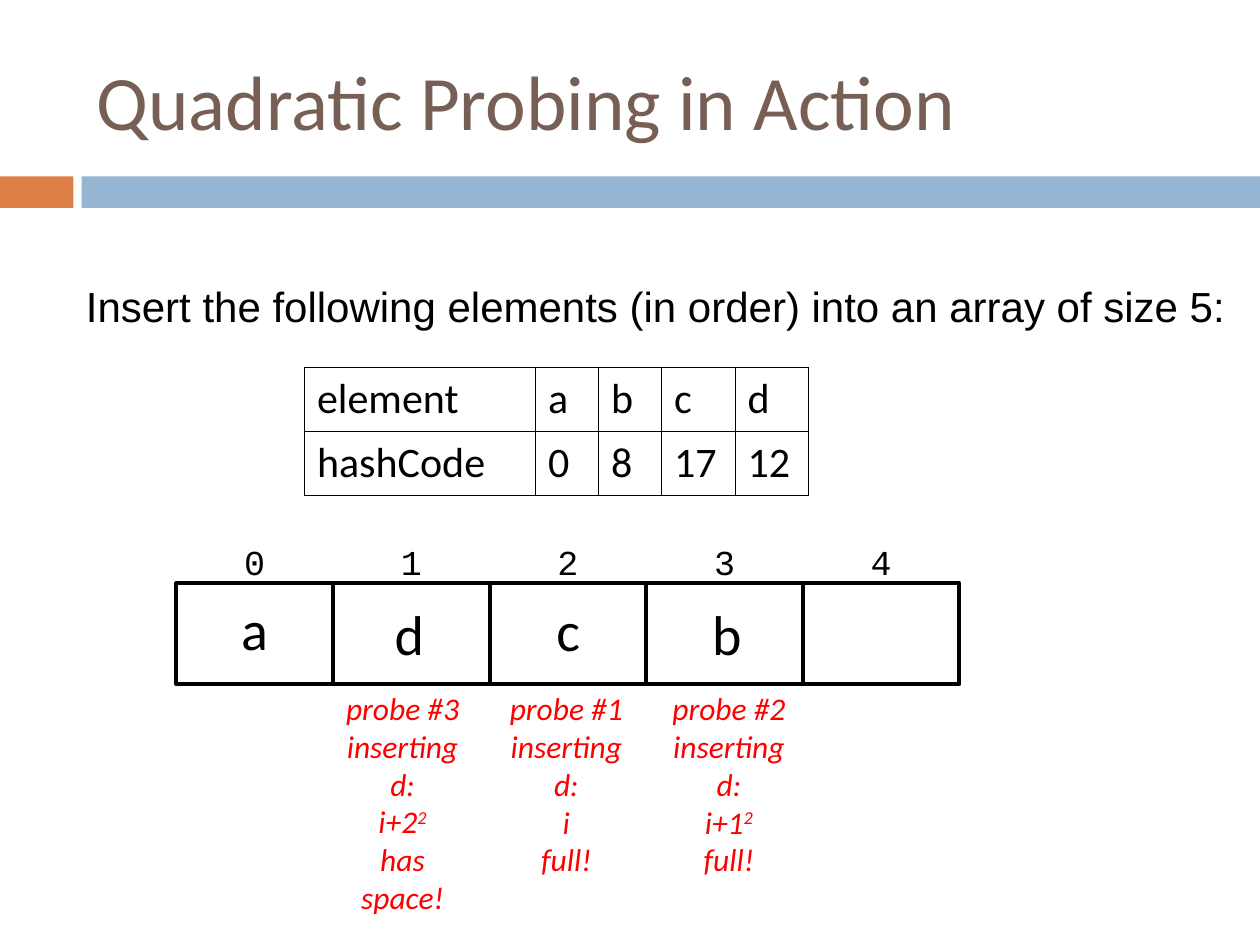
from lxml import etree
from pptx import Presentation
from pptx.dml.color import RGBColor
from pptx.enum.shapes import MSO_SHAPE
from pptx.enum.text import MSO_ANCHOR, MSO_AUTO_SIZE, PP_ALIGN
from pptx.oxml.ns import qn
from pptx.util import Pt

RECT = MSO_SHAPE.RECTANGLE
MIDDLE = MSO_ANCHOR.MIDDLE
LEFT, CENTER = PP_ALIGN.LEFT, PP_ALIGN.CENTER
GROW, FIXED = MSO_AUTO_SIZE.SHAPE_TO_FIT_TEXT, MSO_AUTO_SIZE.NONE

ORANGE = RGBColor(0xDD, 0x80, 0x47)
BLUE = RGBColor(0x94, 0xB6, 0xD2)
BROWN = RGBColor(0x77, 0x5F, 0x55)
BLACK = RGBColor(0, 0, 0)
RED = RGBColor(0xFF, 0, 0)

# Array geometry
START, SLOT, TOP, TALL = 100.8, 89.5, 333.3, 57.6


def style(para, size, font="Calibri", color=BLACK, align=LEFT):
    para.alignment = align
    for run in para.runs:
        run.font.size = Pt(size)
        run.font.name = font
        run.font.color.rgb = color


def add_box(shapes, left, top, width, height, fill=None, line=None):
    box = shapes.add_shape(RECT, Pt(left), Pt(top), Pt(width), Pt(height))
    box.shadow.inherit = False
    if fill:
        box.fill.solid()
        box.fill.fore_color.rgb = fill
    else:
        box.fill.background()
    if line:
        box.line.color.rgb = line
        box.line.width = Pt(2.25)
    else:
        box.line.fill.background()


def add_text(shapes, left, top, width, height, text, size, wrap=True, **look):
    box = shapes.add_textbox(Pt(left), Pt(top), Pt(width), Pt(height))
    frame = box.text_frame
    frame.text = text
    frame.word_wrap = wrap
    frame.auto_size = GROW
    for para in frame.paragraphs:
        style(para, size, **look)
    return frame


def add_title(slide, text):
    title = slide.shapes.title
    title.left, title.top = Pt(48), Pt(18)
    title.width, title.height = Pt(642), Pt(78)
    frame = title.text_frame
    frame.text = text
    frame.vertical_anchor = MIDDLE
    style(frame.paragraphs[0], 44, color=BROWN)


def add_border(cell):
    props = cell._tc.get_or_add_tcPr()
    for spot, side in enumerate(("lnL", "lnR", "lnT", "lnB")):
        line = etree.Element(qn("a:" + side), w="5080")
        fill = etree.SubElement(line, qn("a:solidFill"))
        etree.SubElement(fill, qn("a:srgbClr"), val=str(BLACK))
        props.insert(spot, line)


def add_grid(shapes, left, top, widths, height, rows):
    frame = shapes.add_table(len(rows), len(widths), Pt(left), Pt(top),
                             Pt(sum(widths)), Pt(height * len(rows)))
    table = frame.table
    table.first_row = table.horz_banding = False
    for col, width in zip(table.columns, widths):
        col.width = Pt(width)
    for r, row in enumerate(rows):
        for c, text in enumerate(row):
            cell = table.cell(r, c)
            cell.text = text
            cell.fill.background()
            cell.vertical_anchor = MIDDLE
            style(cell.text_frame.paragraphs[0], 24)
            add_border(cell)


def add_slots(shapes, count):
    group = shapes.add_group_shape().shapes
    for i in range(count):
        add_box(group, START + i * SLOT, TOP, SLOT, TALL, line=BLACK)
    for i in range(count):
        frame = add_text(group, START + i * SLOT, 312, SLOT, 18, str(i), 20,
                         font="Courier New", align=CENTER)
        frame.auto_size = FIXED
        frame.vertical_anchor = MIDDLE
        frame.margin_left = frame.margin_right = Pt(7.2)
        frame.margin_top = frame.margin_bottom = Pt(7.2)


def add_probe(shapes, left, number, step, power, *result):
    lines = [f"probe #{number}", "inserting d:", step, *result]
    frame = add_text(shapes, left, 390.24, 91.5, 22 * len(lines) + 7,
                     "\n".join(lines), 18, color=RED, align=CENTER)
    if power:
        para = frame.paragraphs[2]
        para.add_run().text = power
        style(para, 18, color=RED, align=CENTER)
        para.runs[-1]._r.get_or_add_rPr().set("baseline", "30000")
    for para in frame.paragraphs:
        for run in para.runs:
            run.font.italic = True


def main():
    deck = Presentation()
    deck.slide_width, deck.slide_height = Pt(720), Pt(540)
    slide = deck.slides.add_slide(deck.slide_layouts[5])
    shapes = slide.shapes

    # Title and bands
    add_box(shapes, 0, 100.8, 42, 18, fill=ORANGE)
    add_box(shapes, 46.6, 100.8, 673.4, 18, fill=BLUE)
    add_title(slide, "Quadratic Probing in Action")

    # Task and hash codes
    add_grid(shapes, 174, 210, [132, 36, 36, 42, 42], 36.5,
             [["element", "a", "b", "c", "d"],
              ["hashCode", "0", "8", "17", "12"]])
    add_text(shapes, 42, 156.5, 672.5, 36,
             "Insert the following elements (in order) into an array of size 5:",
             24, wrap=False, font="Arial")

    # Array and its values
    add_slots(shapes, 5)
    for text, left, top in (("a", 125.3, 336.2), ("b", 395.3, 339.1),
                            ("c", 304.6, 337), ("d", 213.8, 339.1)):
        add_text(shapes, left, top, 40.3, 46, text, 32, align=CENTER)

    # Probes for d
    add_probe(shapes, 277.9, 1, "i", "", "full!")
    add_probe(shapes, 370.8, 2, "i+1", "2", "full!")
    add_probe(shapes, 184.3, 3, "i+2", "2", "has", "space!")

    deck.save("out.pptx")


if __name__ == "__main__":
    main()
